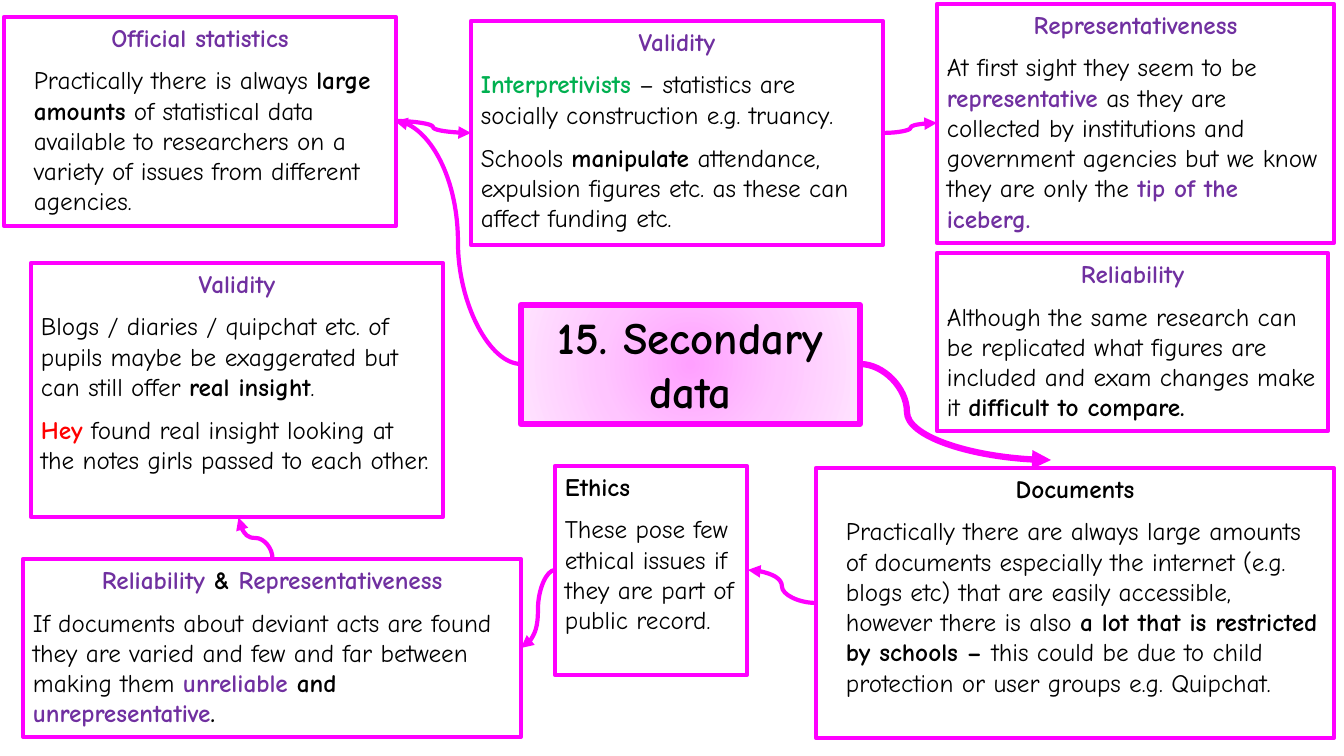
"""Build a mind map slide about secondary data in sociology."""
from pptx import Presentation, oxml, util as u
from pptx.dml.color import RGBColor
from pptx.enum import shapes, text
from pptx.oxml.ns import nsdecls, qn

SCALE = 12192000 / 1344
PINK = "FF00FF"
STYLES = {
    "plain": ("000000", False),
    "bold": ("000000", True),
    "purple": ("7030A0", True),
    "green": ("00B050", True),
    "red": ("FF0000", True),
}


def px(*vals):
    return [u.Emu(round(v * SCALE)) for v in vals]


def rgb(code):
    return RGBColor.from_string(code)


deck = Presentation()
deck.slide_width, deck.slide_height = px(1344, 756)
slide = deck.slides.add_slide(deck.slide_layouts[6])

boxes = [
    dict(at=(521, 305, 339, 119), size=32, line=4.5, glow=True, paras=[
        [("15. Secondary data", "bold")]]),
    dict(at=(4, 17, 392, 209), indent=20, paras=[
        [("Official statistics", "purple")],
        [("Practically there is always ", "plain"), ("large amounts", "bold"),
         (" of statistical data available to researchers on a variety of issues "
          "from different agencies.", "plain")]]),
    dict(at=(471, 21, 412, 224), paras=[
        [("Validity", "purple")],
        [("Interpretivists", "green"),
         (" – statistics are socially construction e.g. truancy.", "plain")],
        [("Schools ", "plain"), ("manipulate", "bold"),
         (" attendance, expulsion figures etc. as these can affect funding etc.",
          "plain")]]),
    dict(at=(937, 253, 391, 178), paras=[
        [("Reliability", "purple")],
        [("Although the same research can be replicated what figures are included "
          "and exam changes make it ", "plain"),
         ("difficult to compare.", "bold")]]),
    dict(at=(937, 4, 397, 239), paras=[
        [("Representativeness", "purple")],
        [("At first sight they seem to be ", "plain"), ("representative", "purple"),
         (" as they are collected by institutions and government agencies but we "
          "know they are only the ", "plain"),
         ("tip of the iceberg.", "purple")]]),
    dict(at=(816, 468, 518, 270), indent=20, paras=[
        [("Documents", "bold")],
        [("Practically there are always large amounts of documents especially the "
          "internet (e.g. blogs etc) that are easily accessible, however there is "
          "also ", "plain"),
         ("a lot that is restricted by schools – ", "bold"),
         ("this could be due to child protection or user groups e.g. Quipchat.",
          "plain")]]),
    dict(at=(555, 466, 192, 209), head="LEFT", paras=[
        [("Ethics", "bold")],
        [("These pose few ethical issues if they are part of public record.",
          "plain")]]),
    dict(at=(23, 559, 498, 178), paras=[
        [("Reliability", "purple"), (" & ", "bold"),
         ("Representativeness", "purple")],
        [("If documents about deviant acts are found they are varied and few and "
          "far between making them ", "plain"),
         ("unreliable", "purple"), (" and ", "bold"),
         ("unrepresentative", "purple"), (".", "bold")]]),
    dict(at=(31, 263, 412, 254), paras=[
        [("Validity", "purple")],
        [("Blogs / diaries / quipchat etc. of pupils maybe be exaggerated but can "
          "still offer ", "plain"), ("real insight", "bold"), (".", "plain")],
        [("Hey", "red"),
         (" found real insight looking at the notes girls passed to each other.",
          "plain")]]),
]

for box in boxes:
    shape = slide.shapes.add_shape(shapes.MSO_SHAPE.RECTANGLE, *px(*box["at"]))
    shape.shadow.inherit = False
    shape.fill.background()
    shape.line.color.rgb = rgb(PINK)
    shape.line.width = u.Pt(box.get("line", 3))
    if box.get("glow"):
        stops = "".join(
            f'<a:gs pos="{pos}"><a:srgbClr val="{code}"/></a:gs>'
            for pos, code in ((0, "FFA0FF"), (50000, "FFC5FF"), (100000, "FFE3FF")))
        grad = oxml.parse_xml(
            f'<a:gradFill {nsdecls("a")}><a:gsLst>{stops}</a:gsLst>'
            '<a:path path="circle"><a:fillToRect l="50000" t="50000" r="50000" '
            'b="50000"/></a:path></a:gradFill>')
        props = shape.element.spPr
        props.replace(props.find(qn("a:noFill")), grad)
    frame = shape.text_frame
    frame.word_wrap = True
    frame.vertical_anchor = text.MSO_ANCHOR.TOP
    for row, runs in enumerate(box["paras"]):
        para = frame.add_paragraph() if row else frame.paragraphs[0]
        side = "LEFT" if row else box.get("head", "CENTER")
        para.alignment = text.PP_ALIGN[side]
        para.space_before = u.Pt(9 if row else 0)
        if "indent" in box:
            [left] = px(box["indent"])
            form = para._p.get_or_add_pPr()
            form.set("marL", str(left))
            form.set("indent", str(0 if row else -left))
        for words, style in runs:
            run = para.add_run()
            run.text = words
            code, bold = STYLES[style]
            look = dict(name="Comic Neue", size=u.Pt(box.get("size", 18)), bold=bold)
            for key, val in look.items():
                setattr(run.font, key, val)
            run.font.color.rgb = rgb(code)

links = [
    dict(ends=(395, 121, 471, 133)),
    dict(ends=(521, 364, 395, 121)),
    dict(ends=(884, 133, 937, 123)),
    dict(ends=(816, 603, 748, 570)),
    dict(ends=(860, 364, 1051, 460), line=4.5, bend=24600),
    dict(ends=(555, 570, 521, 648)),
    dict(ends=(235, 555, 276, 521), turn=270),
]

for link in links:
    wire = slide.shapes.add_connector(shapes.MSO_CONNECTOR.CURVE, *px(*link["ends"]))
    wire.line.color.rgb = rgb(PINK)
    wire.line.width = u.Pt(link.get("line", 3))
    props = wire.element.spPr
    wire.line._get_or_add_ln().append(
        oxml.parse_xml(f'<a:tailEnd {nsdecls("a")} type="triangle"/>'))
    props.append(oxml.parse_xml(f'<a:effectLst {nsdecls("a")}/>'))
    if "turn" in link:
        props.find(qn("a:xfrm")).set("rot", str(link["turn"] * 60000))
    if "bend" in link:
        geom = props.find(qn("a:prstGeom"))
        geom.replace(geom.find(qn("a:avLst")), oxml.parse_xml(
            f'<a:avLst {nsdecls("a")}><a:gd name="adj1" '
            f'fmla="val {link["bend"]}"/></a:avLst>'))

deck.save("out.pptx")
